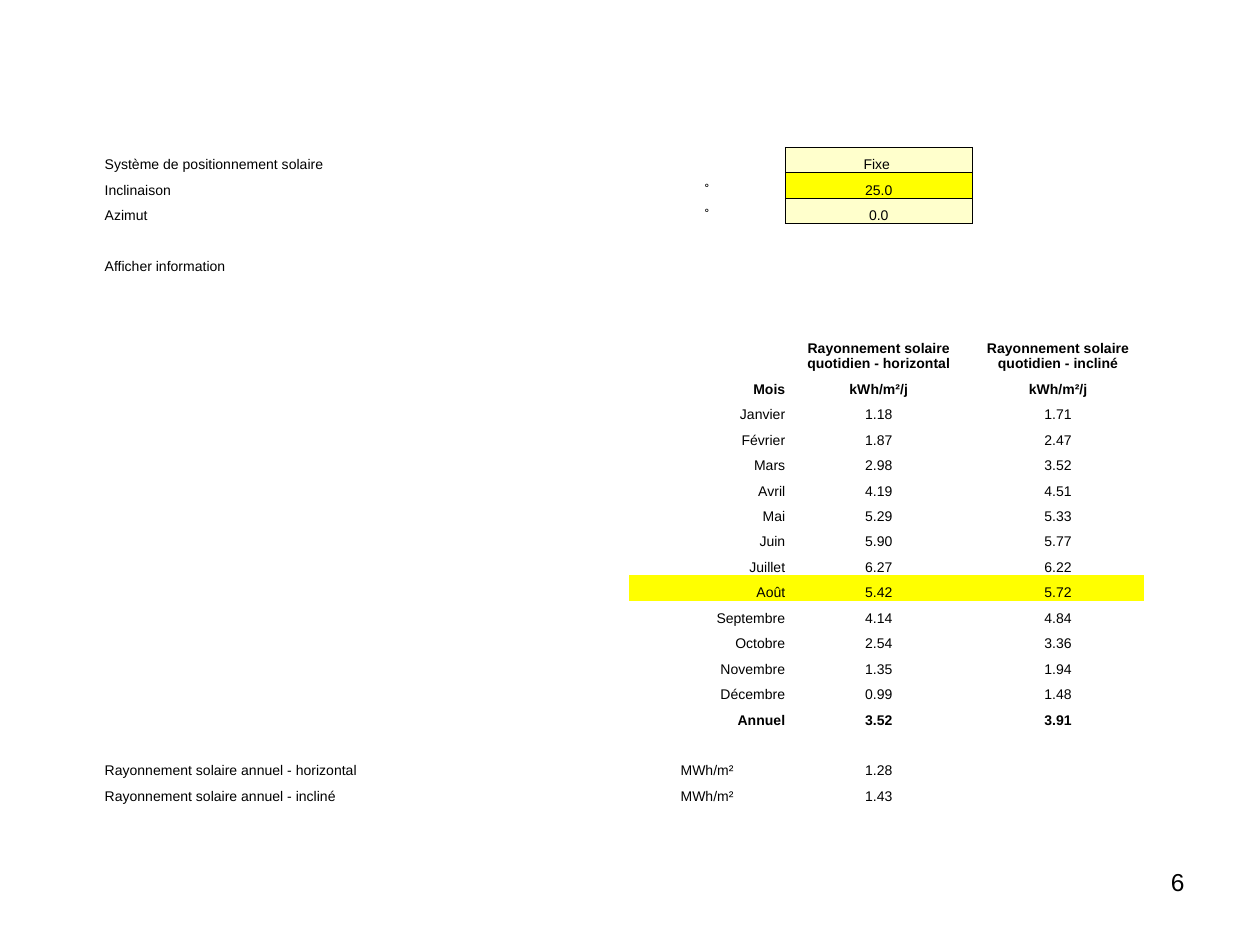
import pptx
import pptx.dml.color
import pptx.enum.text
import pptx.oxml
import pptx.oxml.ns
import pptx.util
from pptx.util import Cm

LEFT, CENTER, RIGHT = (pptx.enum.text.PP_ALIGN[name] for name in ("LEFT", "CENTER", "RIGHT"))
NO_TABLE_STYLE = "{2D5ABB26-0587-4C30-8999-92F81FD0307C}"
YELLOW, CREAM, WHITE = "FFFF00", "FFFFCC", "FFFFFF"


def color(value):
    return pptx.dml.color.RGBColor.from_string(value)


def write(paragraph, text, size, alignment, bold=False):
    """Write one formatted run, or set the size of an empty paragraph."""
    paragraph.alignment = alignment
    if not text:
        ending = pptx.oxml.parse_xml(
            f'<a:endParaRPr {pptx.oxml.ns.nsdecls("a")} sz="{size * 100}"/>')
        paragraph._p.append(ending)
        return
    run = paragraph.add_run()
    run.text = text
    run.font.color.rgb = color("000000")
    font_format = {"name": "Arial", "size": pptx.util.Pt(size), "bold": bold}
    for name, value in font_format.items():
        setattr(run.font, name, value)


presentation = pptx.Presentation()
presentation.slide_width = Cm(25.4)
presentation.slide_height = Cm(19.05)
slide = presentation.slides.add_slide(presentation.slide_layouts[6])

number_box = slide.shapes.add_textbox(Cm(18.21), Cm(17.35), Cm(5.92), Cm(1.32))
number_box.text_frame.word_wrap = True
write(number_box.text_frame.paragraphs[0], "6", 14, RIGHT)

blank_row = ("", "", "", "")
rows = [
    ("Système de positionnement solaire", "", "Fixe ", ""),
    ("Inclinaison", "˚", "25.0", ""),
    ("Azimut", "˚", "0.0", ""),
    blank_row,
    ("Afficher information", "", "", ""),
    ("", "", "Rayonnement solaire quotidien - horizontal",
     "Rayonnement solaire quotidien - incliné"),
    ("", "Mois", "kWh/m²/j", "kWh/m²/j"),
    ("", "Janvier", "1.18", "1.71"),
    ("", "Février", "1.87", "2.47"),
    ("", "Mars", "2.98", "3.52"),
    ("", "Avril", "4.19", "4.51"),
    ("", "Mai", "5.29", "5.33"),
    ("", "Juin", "5.90", "5.77"),
    ("", "Juillet", "6.27", "6.22"),
    ("", "Août", "5.42", "5.72"),
    ("", "Septembre", "4.14", "4.84"),
    ("", "Octobre", "2.54", "3.36"),
    ("", "Novembre", "1.35", "1.94"),
    ("", "Décembre", "0.99", "1.48"),
    ("", "Annuel", "3.52", "3.91"),
    blank_row,
    ("Rayonnement solaire annuel - horizontal", "MWh/m²", "1.28", ""),
    ("Rayonnement solaire annuel - incliné", "MWh/m²", "1.43", ""),
    blank_row,
]
heading_row = 5
bold_rows = {heading_row, 6, 19}
month_rows = range(6, 20)
input_rows = range(3)
fills = {(0, 2): CREAM, (1, 2): YELLOW, (2, 2): CREAM,
         (14, 1): YELLOW, (14, 2): YELLOW, (14, 3): YELLOW}

table_height, heading_height = Cm(13.77), Cm(1.96)
row_height = (table_height - heading_height) // (len(rows) - 1)
column_widths = [Cm(10.57), Cm(3.15), Cm(3.77), Cm(3.46)]
table = slide.shapes.add_table(len(rows), len(column_widths), Cm(2.11), Cm(2.97),
                               sum(column_widths), table_height).table
for name in ("first_row", "horz_banding"):
    setattr(table, name, False)
table._tbl.tblPr.find(pptx.oxml.ns.qn("a:tableStyleId")).text = NO_TABLE_STYLE
for column, width in zip(table.columns, column_widths):
    column.width = width

cell_format = {"margin_left": 0, "margin_right": 0, "margin_top": 0, "margin_bottom": 0,
               "vertical_anchor": pptx.enum.text.MSO_ANCHOR.BOTTOM}
for row_index, texts in enumerate(rows):
    table.rows[row_index].height = heading_height if row_index == heading_row else row_height
    for column_index, text in enumerate(texts):
        cell = table.cell(row_index, column_index)
        for name, value in cell_format.items():
            setattr(cell, name, value)
        if row_index in input_rows and column_index == 2:
            for side in "LRTB":
                cell._tc.get_or_add_tcPr().append(pptx.oxml.parse_xml(
                    f'<a:ln{side} {pptx.oxml.ns.nsdecls("a")} w="6350"><a:solidFill>'
                    f'<a:srgbClr val="000000"/></a:solidFill></a:ln{side}>'))
        cell.fill.solid()
        cell.fill.fore_color.rgb = color(fills.get((row_index, column_index), WHITE))
        if column_index == 0:
            alignment = LEFT
        elif column_index == 1 and row_index in month_rows:
            alignment = RIGHT
        else:
            alignment = CENTER
        write(cell.text_frame.paragraphs[0], text, 8, alignment, row_index in bold_rows)

presentation.save("out.pptx")
